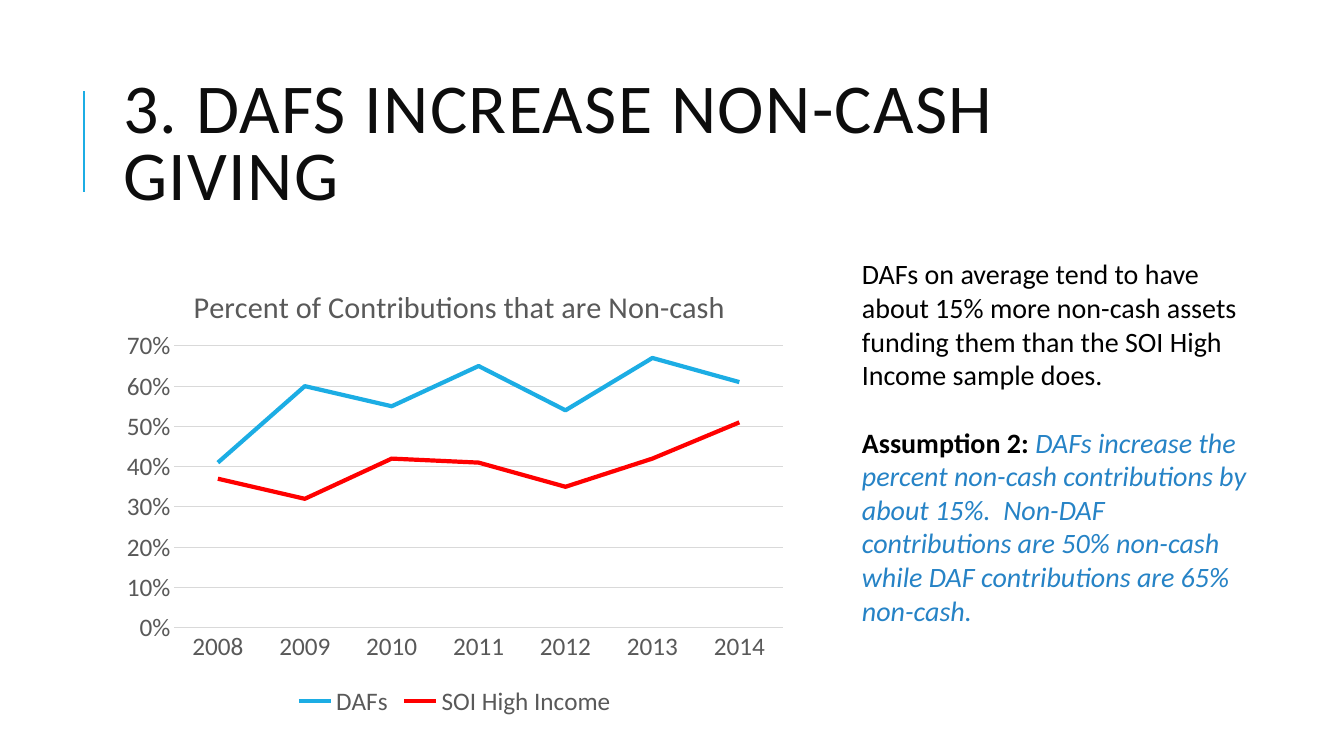
from dataclasses import dataclass

from lxml.etree import SubElement as Sub
from pptx import Presentation as Deck
from pptx.chart.data import CategoryChartData as Data
from pptx.dml.color import RGBColor as Rgb
from pptx.enum.chart import XL_CHART_TYPE as Kind, XL_LEGEND_POSITION as Spot, XL_TICK_MARK as Tick
from pptx.enum.shapes import MSO_CONNECTOR as Link
from pptx.enum.text import MSO_ANCHOR as Anchor, MSO_AUTO_SIZE as Fit, PP_ALIGN as Align
from pptx.oxml.ns import qn
from pptx.util import Inches, Pt


@dataclass(frozen=True)
class Theme:
    face: str = "Calibri"
    ink: str = "000000"
    head: str = "0D0D0D"
    gray: str = "595959"
    grid: str = "D9D9D9"
    sky: str = "1CADE4"
    blue: str = "2683C6"
    red: str = "FF0000"
    title: float = 50
    label: float = 18
    name: float = 21.6
    body: float = 20


@dataclass(frozen=True)
class Box:
    left: float
    top: float
    width: float
    height: float

    def size(self) -> tuple:
        return tuple(Inches(n) for n in (self.left, self.top, self.width, self.height))


@dataclass(frozen=True)
class Trend:
    name: str
    color: str
    values: tuple


@dataclass(frozen=True)
class Span:
    text: str
    color: str
    bold: bool = False
    slant: bool = False


LOOK = Theme()
YEARS = [str(year) for year in range(2008, 2015)]
TRENDS = (
    Trend("DAFs", LOOK.sky, (0.41, 0.6, 0.55, 0.65, 0.54, 0.67, 0.61)),
    Trend("SOI High Income", LOOK.red, (0.37, 0.32, 0.42, 0.41, 0.35, 0.42, 0.51)),
)
NOTES = (
    (Span("DAFs on average tend to have about 15% more non-cash assets funding them "
          "than the SOI High Income sample does.", LOOK.ink),),
    (Span("Assumption 2: ", LOOK.ink, bold=True),
     Span("DAFs increase the percent non-cash contributions by about 15%.  Non-DAF "
          "contributions are 50% non-cash while DAF contributions are 65% non-cash.",
          LOOK.blue, slant=True)),
)


def style(font, size: float, color: str) -> None:
    font.name = LOOK.face
    font.size = Pt(size)
    font.bold = False
    font.color.rgb = Rgb.from_string(color)


def stroke(line, color: str, width: float) -> None:
    line.color.rgb = Rgb.from_string(color)
    line.width = Pt(width)


def place(owner, **sides: float) -> None:
    layout = owner.find(qn("c:layout"))
    if layout is None:
        layout = owner.makeelement(qn("c:layout"), {})
        text = owner.find(qn("c:tx"))
        owner.insert(0 if text is None else owner.index(text) + 1, layout)
    manual = Sub(layout, qn("c:manualLayout"))
    if "w" in sides:
        Sub(manual, qn("c:layoutTarget"), val="inner")
    for side in ("x", "y"):
        Sub(manual, qn(f"c:{side}Mode"), val="edge")
    for side, value in sides.items():
        Sub(manual, qn(f"c:{side}"), val=str(value))


def add_rule(slide) -> None:
    rule = slide.shapes.add_connector(
        Link.STRAIGHT, Inches(0.83), Inches(1.9), Inches(0.83), Inches(0.9))
    stroke(rule.line, LOOK.sky, 1.5)
    Sub(rule._element.spPr, qn("a:effectLst"))


def add_title(slide, box: Box) -> None:
    title = slide.shapes.title
    title.left, title.top, title.width, title.height = box.size()
    frame = title.text_frame
    frame.text = "3. DAFS INCREASE NON-CASH GIVING"
    frame.vertical_anchor = Anchor.MIDDLE
    frame.auto_size = Fit.NONE
    line = frame.paragraphs[0]
    line.alignment = Align.LEFT
    line.line_spacing = 0.8
    style(line.font, LOOK.title, LOOK.head)
    line.runs[0].font._element.set("spc", "100")


def add_graph(slide, box: Box) -> None:
    data = Data(number_format="0%")
    data.categories = YEARS
    for trend in TRENDS:
        data.add_series(trend.name, trend.values)
    chart = slide.shapes.add_chart(Kind.LINE, *box.size(), data).chart
    style(chart.font, LOOK.label, LOOK.gray)

    chart.has_title = True
    frame = chart.chart_title.text_frame
    frame.text = "Percent of Contributions that are Non-cash"
    style(frame.paragraphs[0].font, LOOK.name, LOOK.gray)
    place(chart.chart_title._element, x=0.11, y=0.06)

    chart.has_legend = True
    chart.legend.position = Spot.BOTTOM
    chart.legend.include_in_layout = False
    style(chart.legend.font, LOOK.label, LOOK.gray)

    for axis in (chart.category_axis, chart.value_axis):
        axis.major_tick_mark = axis.minor_tick_mark = Tick.NONE
        style(axis.tick_labels.font, LOOK.label, LOOK.gray)
    stroke(chart.category_axis.format.line, LOOK.grid, 0.75)
    scale = chart.value_axis
    scale.minimum_scale, scale.maximum_scale, scale.major_unit = 0, 0.7, 0.1
    scale.tick_labels.number_format = "0%"
    scale.tick_labels.number_format_is_linked = False
    scale.format.line.fill.background()
    stroke(scale.major_gridlines.format.line, LOOK.grid, 0.75)

    plot = chart.plots[0]
    plot.vary_by_categories = False
    for series, trend in zip(plot.series, TRENDS):
        series.smooth = False
        stroke(series.format.line, trend.color, 3)
    place(chart._chartSpace.chart.plotArea, x=0.09, y=0.2, w=0.89, h=0.6)


def add_notes(slide, box: Box) -> None:
    frame = slide.shapes.add_textbox(*box.size()).text_frame
    frame.word_wrap = True
    frame.auto_size = Fit.SHAPE_TO_FIT_TEXT
    for index, spans in enumerate(NOTES):
        para = frame.add_paragraph() if index else frame.paragraphs[0]
        para.space_before = Pt(24 if index else 0)
        para.font.name = LOOK.face
        para.font.size = Pt(LOOK.body)
        for span in spans:
            run = para.add_run()
            run.text = span.text
            run.font.bold = span.bold
            run.font.italic = span.slant
            run.font.color.rgb = Rgb.from_string(span.color)


def main() -> None:
    deck = Deck()
    deck.slide_width, deck.slide_height = Inches(13.33), Inches(7.5)
    slide = deck.slides.add_slide(deck.slide_layouts.get_by_name("Title Only"))
    add_rule(slide)
    add_title(slide, Box(1.12, 0.64, 10.63, 1.64))
    add_graph(slide, Box(1.12, 2.5, 6.78, 4.66))
    add_notes(slide, Box(8.45, 2.5, 4.04, 4.14))
    deck.save("out.pptx")


if __name__ == "__main__":
    main()
